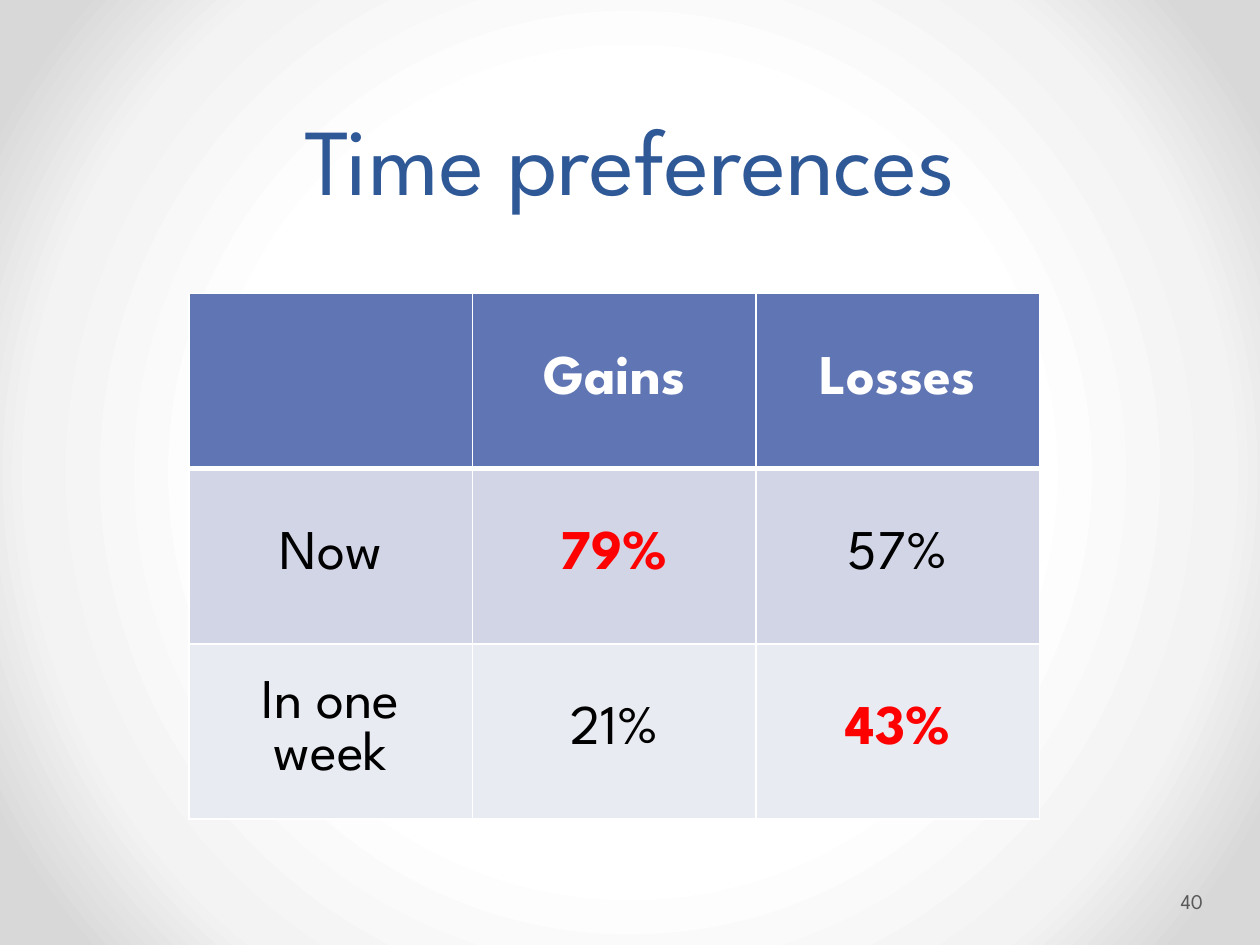
"""Builds the slide on time preferences for gains and losses."""
from dataclasses import dataclass

from lxml import etree
from pptx import Presentation, util as u
from pptx.dml.color import RGBColor
from pptx.enum import text
from pptx.oxml import parse_xml
from pptx.oxml.ns import nsdecls, qn

WIDTH, HEIGHT = u.Inches(10), u.Inches(7.5)


@dataclass(frozen=True)
class Theme:
    """Colours, type sizes and line widths of the slide."""
    font: str = "League Spartan"
    title: str = "2F5897"
    number: str = "595959"
    header: str = "6076B4"
    bands: tuple = ("D1D5E5", "E9EBF2")
    white: str = "FFFFFF"
    ink: str = "000000"
    accent: str = "FF0000"
    title_size: int = 54
    cell_size: int = 32
    number_size: int = 12
    thin: int = 1
    thick: int = 3
    glow: tuple = ((0, "FFFFFF"), (50, "FFFFFF"), (76, "F3F3F3"),
                   (92, "D8D8D8"), (100, "D8D8D8"))


THEME = Theme()
ROWS = (("", "Gains", "Losses"),
        ("Now", "79%", "57%"),
        ("In one week", "21%", "43%"))
HIGHLIGHTS = {"79%", "43%"}


def place(shape, left, top, width, height):
    """Position a shape by shares of the slide's size."""
    shape.left, shape.width = int(WIDTH * left), int(WIDTH * width)
    shape.top, shape.height = int(HEIGHT * top), int(HEIGHT * height)


def write(frame, words, size, color, align, bold=False):
    """Fill a text frame with one formatted paragraph."""
    frame.word_wrap = True
    para = frame.paragraphs[0]
    para.text, para.alignment = words, align
    font = para.font
    font.name, font.size, font.bold = THEME.font, u.Pt(size), bold
    font.color.rgb = RGBColor.from_string(color)


def paint_background(page):
    """Give the page a circular gradient that darkens outwards."""
    page.background.fill.solid()
    solid = page.element.find(".//" + qn("p:bgPr")).find(qn("a:solidFill"))
    stops = "".join(f'<a:gs pos="{share * 1000}"><a:srgbClr val="{color}"/></a:gs>'
                    for share, color in THEME.glow)
    gradient = parse_xml(
        f'<a:gradFill {nsdecls("a")} rotWithShape="1"><a:gsLst>{stops}</a:gsLst>'
        '<a:path path="circle"><a:fillToRect l="50000" t="50000" r="50000" b="50000"/>'
        '</a:path></a:gradFill>')
    solid.getparent().replace(solid, gradient)


def add_title(page, words):
    """Write the title placeholder above the table."""
    title = page.shapes.title
    place(title, 0.05, 0, 0.9, 1.75 / 7.5)
    frame = title.text_frame
    write(frame, words, THEME.title_size, THEME.title, text.PP_ALIGN.CENTER)
    frame.auto_size = text.MSO_AUTO_SIZE.NONE
    frame.vertical_anchor = text.MSO_ANCHOR.BOTTOM
    frame.paragraphs[0].line_spacing = 1.07


def add_page_number(page, number):
    """Write the page number in the lower right corner."""
    box = page.shapes.add_textbox(0, 0, 0, 0)
    place(box, 0.934, 6.95 / 7.5, 0.061, 0.4 / 7.5)
    frame = box.text_frame
    write(frame, number, THEME.number_size, THEME.number, text.PP_ALIGN.LEFT)
    frame.vertical_anchor = text.MSO_ANCHOR.MIDDLE
    frame.margin_left, frame.margin_right = u.Inches(0.03), u.Inches(0.05)


def rule_cell(cell, top, bottom):
    """Draw white borders around a cell."""
    properties = cell._tc.get_or_add_tcPr()
    widths = {"lnL": THEME.thin, "lnR": THEME.thin, "lnT": top, "lnB": bottom}
    for index, (side, width) in enumerate(widths.items()):
        line = etree.Element(qn(f"a:{side}"), w=str(u.Pt(width)))
        fill = etree.SubElement(line, qn("a:solidFill"))
        etree.SubElement(fill, qn("a:srgbClr"), val=THEME.white)
        properties.insert(index, line)


def fill_cell(cell, words, row):
    """Colour one table cell and write its words."""
    header, highlight = row == 0, words in HIGHLIGHTS
    cell.fill.solid()
    cell.fill.fore_color.rgb = RGBColor.from_string(
        THEME.header if header else THEME.bands[(row - 1) % 2])
    cell.vertical_anchor = text.MSO_ANCHOR.MIDDLE
    color = THEME.white if header else THEME.accent if highlight else THEME.ink
    write(cell.text_frame, words, THEME.cell_size, color,
          text.PP_ALIGN.CENTER, header or highlight)
    rule_cell(cell, THEME.thick if row == 1 else THEME.thin,
              THEME.thick if header else THEME.thin)


def add_preferences(page, rows):
    """Add the table of choices on an even grid."""
    columns = len(rows[0])
    table = page.shapes.add_table(
        len(rows), columns, u.Inches(1.5), u.Inches(2.33),
        u.Inches(2.25) * columns, u.Inches(1.39) * len(rows)).table
    for row, entries in enumerate(rows):
        for column, words in enumerate(entries):
            fill_cell(table.cell(row, column), words, row)


def main():
    """Build and save the deck."""
    deck = Presentation()
    deck.slide_width, deck.slide_height = WIDTH, HEIGHT
    page = deck.slides.add_slide(deck.slide_layouts.get_by_name("Title Only"))
    paint_background(page)
    add_title(page, "Time preferences")
    add_page_number(page, "40")
    add_preferences(page, ROWS)
    deck.save("out.pptx")


if __name__ == "__main__":
    main()
